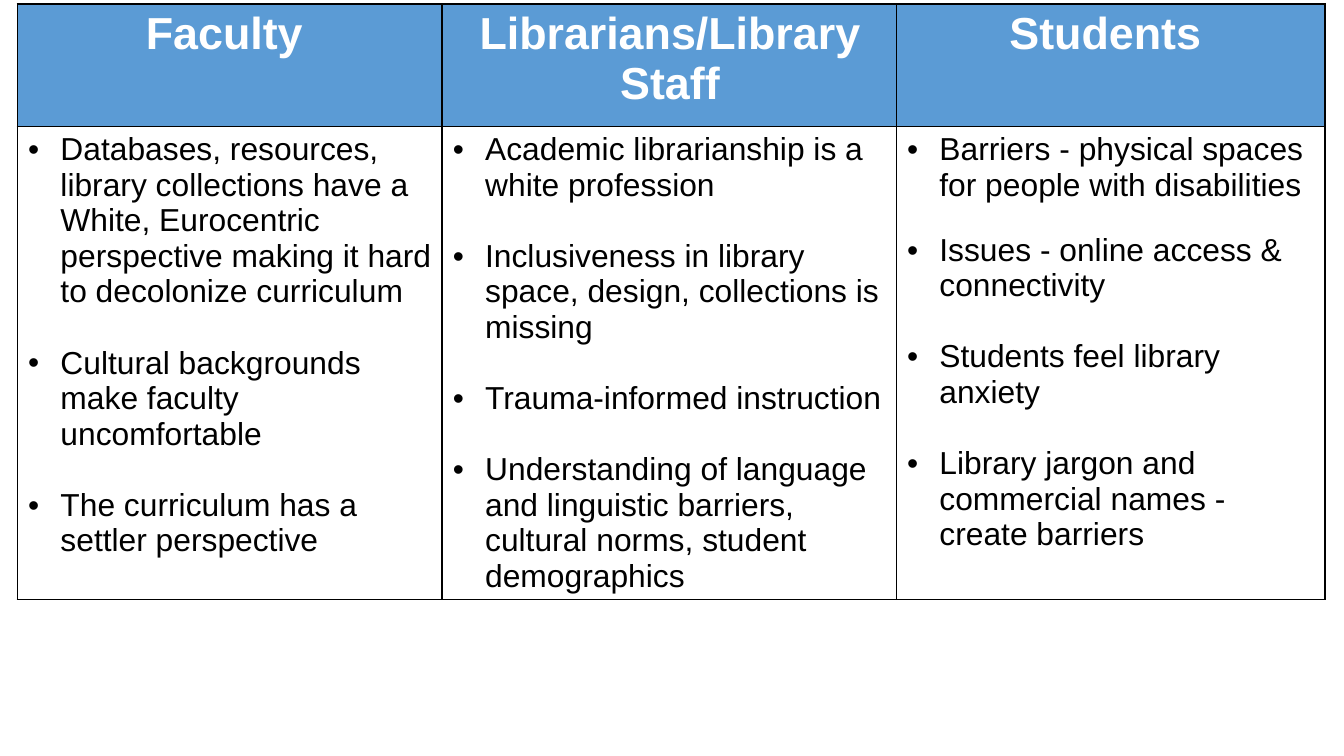
from dataclasses import dataclass

from lxml import etree
from pptx import Presentation
from pptx import util as u
from pptx.dml.color import RGBColor
from pptx.enum import text
from pptx.oxml import ns

BLACK = RGBColor(0x00, 0x00, 0x00)
WHITE = RGBColor(0xFF, 0xFF, 0xFF)
HEADER_BLUE = RGBColor(0x5B, 0x9B, 0xD5)
FONT_NAME = "Arial"
HEADER_SIZE = 24
BODY_SIZE = 17
BODY_GAP = 19
SMALL_GAP = 15.7
BULLET_INDENT = u.Inches(0.24)
SLIDE_WIDTH = u.Inches(10)
SLIDE_HEIGHT = SLIDE_WIDTH * 9 // 16
ROW_HEIGHTS = (0.91, 3.51)


@dataclass(frozen=True)
class Point:
    wording: str
    gap: float = BODY_GAP


@dataclass(frozen=True)
class Audience:
    name: str
    width: float
    points: tuple[Point, ...]


AUDIENCES = (
    Audience("Faculty ", 3.16, (
        Point("Databases, resources, library collections have a White, "
              "Eurocentric perspective making it hard to decolonize curriculum"),
        Point("Cultural backgrounds make faculty uncomfortable "),
        Point("The curriculum has a settler perspective "),
    )),
    Audience("Librarians/Library Staff", 3.38, (
        Point("Academic librarianship is a white profession "),
        Point("Inclusiveness in library space, design, collections is missing"),
        Point("Trauma-informed instruction "),
        Point("Understanding of language and linguistic barriers, "
              "cultural norms, student demographics"),
    )),
    Audience("Students ", 3.19, (
        Point("Barriers - physical spaces for people with disabilities"),
        Point("Issues - online access & connectivity ", SMALL_GAP),
        Point("Students feel library anxiety "),
        Point("Library jargon and commercial names - create barriers"),
    )),
)


def add_element(parent, tag: str, **attributes: str):
    return etree.SubElement(parent, ns.qn(tag), attributes)


def format_cell(cell) -> None:
    cell.margin_left = u.Inches(0.08)
    cell.margin_right = u.Inches(0.07)
    cell.margin_top = cell.margin_bottom = u.Inches(0.04)
    properties = cell._tc.get_or_add_tcPr()
    for side in ("a:lnL", "a:lnR", "a:lnT", "a:lnB"):
        line = add_element(properties, side, w=str(u.Pt(1)))
        fill = add_element(line, "a:solidFill")
        add_element(fill, "a:srgbClr", val=str(BLACK))


def format_runs(paragraph, size: float, color: RGBColor, bold: bool) -> None:
    for run in paragraph.runs:
        run.font.name = FONT_NAME
        run.font.size = u.Pt(size)
        run.font.bold = bold
        run.font.color.rgb = color


def fill_header(cell, name: str) -> None:
    format_cell(cell)
    cell.fill.solid()
    cell.fill.fore_color.rgb = HEADER_BLUE
    cell.text_frame.text = name
    paragraph = cell.text_frame.paragraphs[0]
    paragraph.alignment = text.PP_ALIGN.CENTER
    format_runs(paragraph, HEADER_SIZE, WHITE, True)


def add_bullet(paragraph) -> None:
    properties = paragraph._p.get_or_add_pPr()
    properties.set("marL", str(BULLET_INDENT))
    properties.set("indent", str(-BULLET_INDENT))
    color = add_element(properties, "a:buClr")
    add_element(color, "a:srgbClr", val=str(BLACK))
    add_element(properties, "a:buFont", typeface=FONT_NAME)
    add_element(properties, "a:buChar", char="•")


def fill_points(cell, points: tuple[Point, ...]) -> None:
    format_cell(cell)
    cell.fill.background()
    frame = cell.text_frame
    for index, point in enumerate(points):
        paragraph = frame.add_paragraph() if index else frame.paragraphs[0]
        paragraph.text = point.wording
        add_bullet(paragraph)
        if index:
            paragraph.space_before = u.Pt(point.gap)
        format_runs(paragraph, BODY_SIZE, BLACK, False)


def add_audience_table(slide, audiences: tuple[Audience, ...]) -> None:
    width = sum(audience.width for audience in audiences)
    table = slide.shapes.add_table(
        len(ROW_HEIGHTS), len(audiences), u.Inches(0.13), u.Inches(0.03),
        u.Inches(width), u.Inches(sum(ROW_HEIGHTS))).table
    table.horz_banding = False
    for row, height in zip(table.rows, ROW_HEIGHTS):
        row.height = u.Inches(height)
    for index, audience in enumerate(audiences):
        table.columns[index].width = u.Inches(audience.width)
        fill_header(table.cell(0, index), audience.name)
        fill_points(table.cell(1, index), audience.points)


def main() -> None:
    presentation = Presentation()
    presentation.slide_width = SLIDE_WIDTH
    presentation.slide_height = SLIDE_HEIGHT
    slide = presentation.slides.add_slide(presentation.slide_layouts[6])
    add_audience_table(slide, AUDIENCES)
    presentation.save("out.pptx")


if __name__ == "__main__":
    main()
